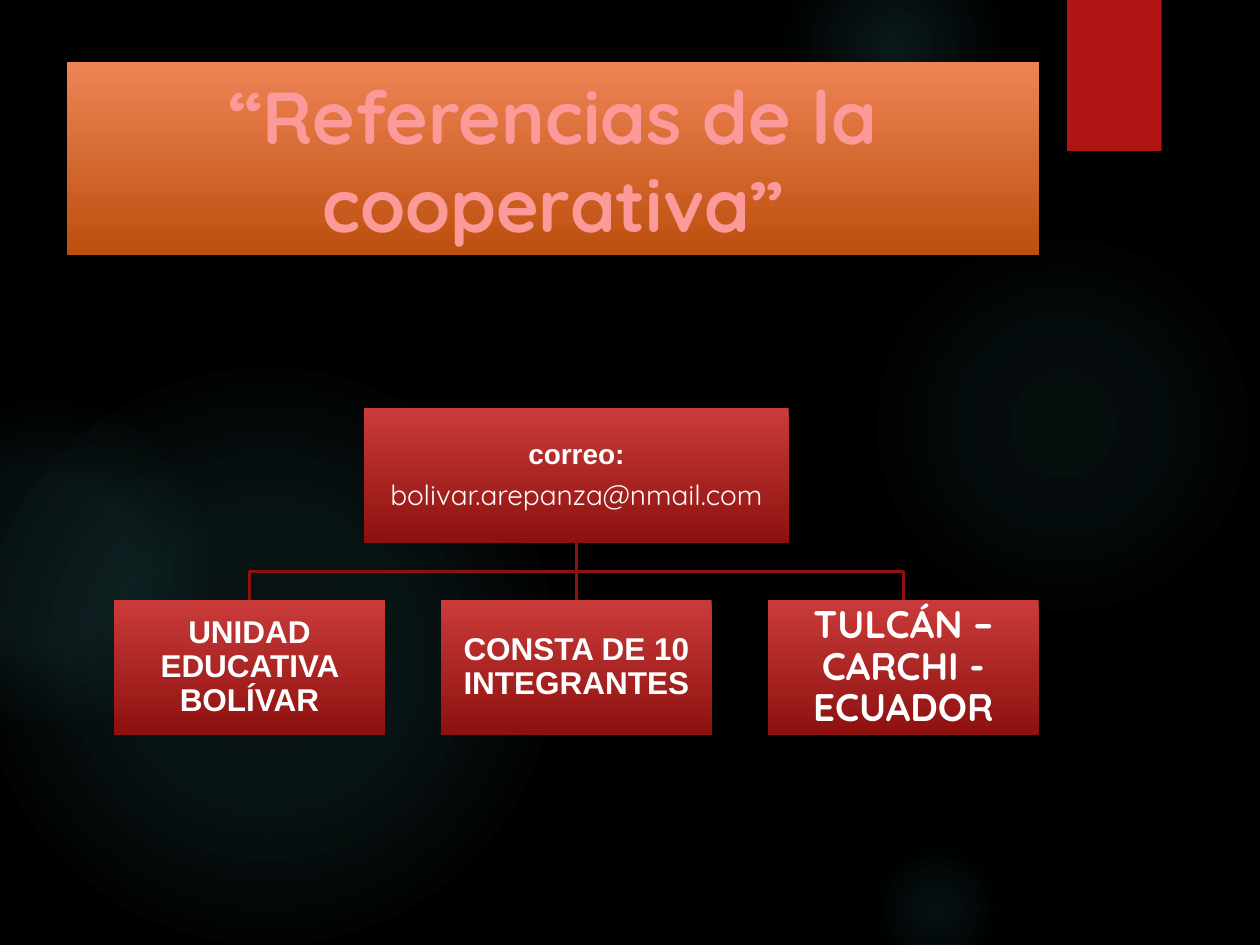
from pptx import Presentation
from pptx import util as u
from pptx.dml.color import RGBColor
from pptx.enum import shapes, text
from pptx.oxml import parse_xml
from pptx.oxml.ns import nsdecls, qn

Cm, Pt = u.Cm, u.Pt


def color(target, hex_value):
    """Give a fill or a colour format one solid colour."""
    if hasattr(target, "solid"):
        target.solid()
        target = target.fore_color
    target.rgb = RGBColor.from_string(hex_value)


def block(kind, left, top, width, height, stops, paragraphs=(), inset=0.03, glow=False):
    """Add a gradient shape; stops are (percent, hex, opacity percent)."""
    shape = slide.shapes.add_shape(kind, Cm(left), Cm(top), Cm(width), Cm(height))
    shape.shadow.inherit = False
    shape.line.fill.background()
    marks = "".join(
        f'<a:gs pos="{at * 1000}"><a:srgbClr val="{tint}">'
        f'<a:alpha val="{opacity * 1000}"/></a:srgbClr></a:gs>'
        for at, tint, opacity in stops)
    way = ('<a:path path="circle"><a:fillToRect l="50000" t="50000" r="50000" b="50000"/></a:path>'
           if glow else '<a:lin ang="5400000" scaled="0"/>')
    shape._element.spPr.find(qn("a:prstGeom")).addnext(parse_xml(
        f'<a:gradFill {nsdecls("a")} rotWithShape="1"><a:gsLst>{marks}</a:gsLst>{way}</a:gradFill>'))

    frame = shape.text_frame
    layout = {"word_wrap": True, "vertical_anchor": text.MSO_ANCHOR.MIDDLE}
    layout.update({f"margin_{side}": Cm(inset) for side in ("left", "right", "top", "bottom")})
    for key, value in layout.items():
        setattr(frame, key, value)
    for number, (words, spacing, tint, font) in enumerate(paragraphs):
        line = frame.add_paragraph() if number else frame.paragraphs[0]
        line.alignment = text.PP_ALIGN.CENTER
        for key, value in spacing.items():
            setattr(line, key, value)
        run = line.add_run()
        run.text = words
        for key, value in font.items():
            setattr(run.font, key, value)
        color(run.font.color, tint)
    return shape


deck = Presentation()
deck.slide_width, deck.slide_height = Cm(25.4), Cm(19.05)
slide = deck.slides.add_slide(deck.slide_layouts[6])
color(slide.background.fill, "000000")

RECT, OVAL = shapes.MSO_SHAPE.RECTANGLE, shapes.MSO_SHAPE.OVAL

# Background glows: left, top, diameter, inner and middle opacity, fade end
glows = [
    (17.5, 4.65, 7.82, 7, 6, 69),
    (15.8, -1.27, 4.45, 14, 7, 73),
    (17.5, 16.94, 2.74, 9, 5, 66),
    (-0.43, 7.42, 11.63, 11, 10, 75),
    (-2.34, 8.05, 6.55, 8, 8, 72),
]
for left, top, size, inner, middle, end in glows:
    block(OVAL, left, top, size, size,
          [(0, "50B9C1", inner), (36, "50B9C1", middle), (end, "50B9C1", 0)], glow=True)

# Red tab
block(RECT, 21.51, 0, 1.91, 3.05, [(0, "B01513", 100), (100, "B01513", 100)])

# Title
block(RECT, 1.35, 1.26, 19.6, 3.88, [(0, "EE8455", 100), (100, "BC4F0E", 100)],
      [("“Referencias de la cooperativa”", {}, "FC9999",
        {"name": "Quicksand", "size": Pt(42), "bold": True})], inset=0.25)

# Organisation chart grid
box_width, box_height, pitch = 5.46, 2.72, 6.59
first_left, root_top, branch_top = 2.3, 8.23, 12.1
root_width = 8.56
centers = [first_left + box_width / 2 + pitch * i for i in range(3)]
root_bottom = root_top + box_height
fork = (root_bottom + branch_top) / 2

# Links from the root to the branches
links = [slide.shapes.add_connector(
    shapes.MSO_CONNECTOR.STRAIGHT, Cm(centers[1]), Cm(root_bottom), Cm(centers[1]), Cm(branch_top))]
for center in (centers[0], centers[2]):
    outline = slide.shapes.build_freeform(Cm(centers[1]), Cm(root_bottom))
    outline.add_line_segments(
        [(Cm(centers[1]), Cm(fork)), (Cm(center), Cm(fork)), (Cm(center), Cm(branch_top))], close=False)
    elbow = outline.convert_to_shape()
    elbow.fill.background()
    links.append(elbow)
for link in links:
    link.line.width = Pt(1.5)
    color(link.line.fill, "8D110F")
    link._element.spPr.append(parse_xml(f'<a:effectLst {nsdecls("a")}/>'))

# Root and branch boxes
red = [(0, "C93B3A", 100), (100, "8D110F", 100)]
tight = {"line_spacing": 0.9}
spaced = {"line_spacing": 0.9, "space_after": Pt(6)}
label = {"name": "Arial", "size": Pt(18), "bold": True}
block(RECT, centers[1] - root_width / 2, root_top, root_width, box_height, red, [
    ("correo:", spaced, "FFFFFF", {**label, "size": Pt(16)}),
    ("bolivar.arepanza@nmail.com", tight, "FFFFFF",
     {"name": "Quicksand", "size": Pt(16), "bold": False}),
])
branches = [
    ("UNIDAD EDUCATIVA BOLÍVAR", label),
    ("CONSTA DE 10 INTEGRANTES", label),
    ("TULCÁN –CARCHI - ECUADOR", {**label, "name": "Quicksand", "size": Pt(22)}),
]
for center, (words, font) in zip(centers, branches):
    block(RECT, center - box_width / 2, branch_top, box_width, box_height, red,
          [(words, tight, "FFFFFF", font)])

deck.save("out.pptx")
